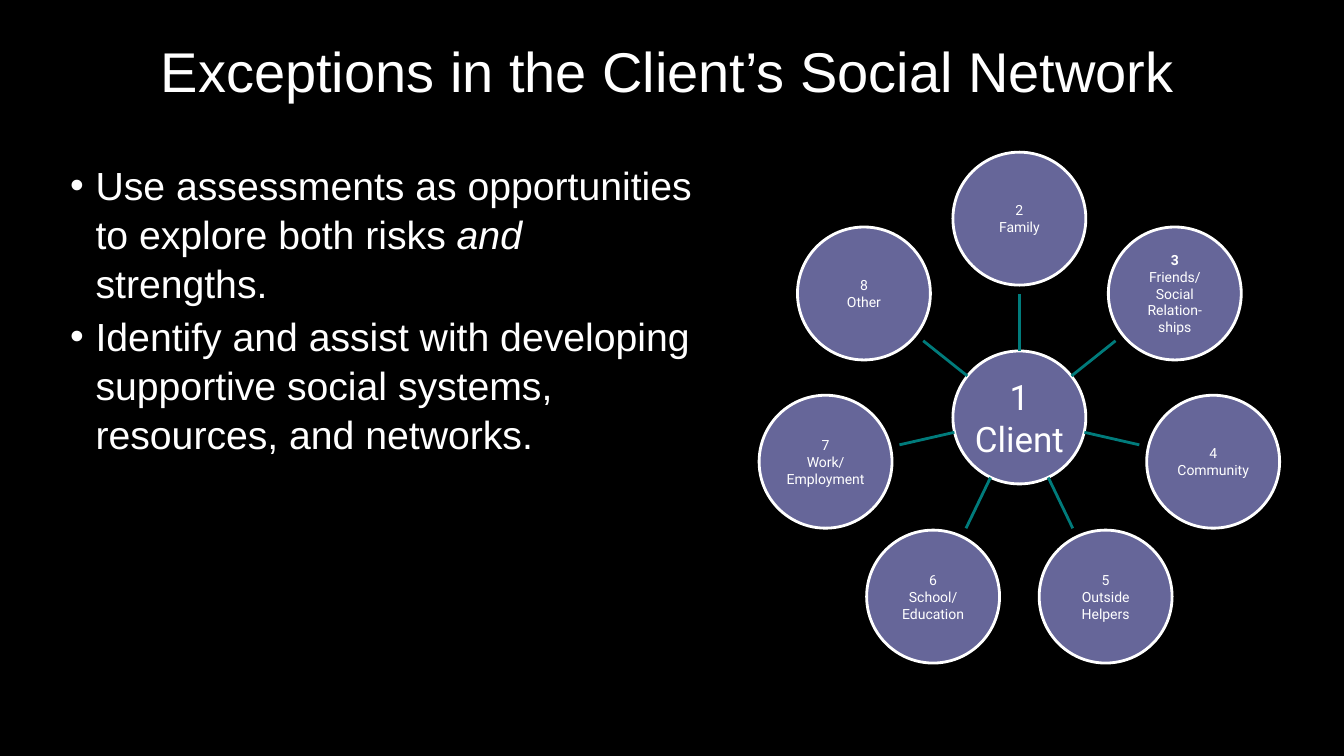
from dataclasses import dataclass
from math import cos, pi, sin

from lxml.etree import SubElement
from pptx import Presentation
from pptx.dml.color import RGBColor
from pptx.enum.shapes import MSO_CONNECTOR, MSO_SHAPE
from pptx.enum.text import MSO_ANCHOR, PP_ALIGN
from pptx.oxml.ns import qn
from pptx.slide import Slide
from pptx.text.text import TextFrame
from pptx.util import Cm, Pt

BLACK, WHITE, PURPLE, TEAL = "000000", "FFFFFF", "666699", "007B7B"
CENTER_X, CENTER_Y = 25.69, 10.52
RING_RADIUS = 5.01
DIAMETER = 3.35
LABEL_SIZE = 2.37
SPOKE_START, SPOKE_END = 1.68, 3.1


@dataclass
class Node:
    number: str
    lines: list[str]
    size: int = 10
    inset: float = 0.03
    bold_number: bool = False


@dataclass
class Run:
    text: str
    italic: bool = False


CLIENT = Node("1", ["Client"], size=25, inset=0.05)
NETWORK = [
    Node("2", ["Family"]),
    Node("3", ["Friends/", "Social Relation-", "ships"], bold_number=True),
    Node("4", ["Community"]),
    Node("5", ["Outside Helpers"]),
    Node("6", ["School/", "Education"]),
    Node("7", ["Work/", "Employment"]),
    Node("8", ["Other"]),
]
BULLETS = [
    [Run("Use assessments as opportunities to explore both risks "),
     Run("and ", italic=True), Run("strengths.")],
    [Run("Identify and assist with developing supportive social systems, "
         "resources, and networks.")],
]


def rgb(color: str) -> RGBColor:
    return RGBColor.from_string(color)


def add_text_frame(s: Slide, x: float, y: float, w: float, h: float,
                   anchor: MSO_ANCHOR) -> TextFrame:
    tf = s.shapes.add_textbox(Cm(x), Cm(y), Cm(w), Cm(h)).text_frame
    tf.word_wrap = True
    tf.vertical_anchor = anchor
    return tf


def add_run(p, text: str, font: str, size: int, bold: bool = False, italic: bool = False) -> None:
    r = p.add_run()
    r.text = text
    r.font.name, r.font.size = font, Pt(size)
    r.font.bold, r.font.italic = bold, italic
    r.font.color.rgb = rgb(WHITE)


def next_paragraph(tf: TextFrame, index: int):
    return tf.paragraphs[0] if index == 0 else tf.add_paragraph()


def add_title(s: Slide, text: str) -> None:
    tf = add_text_frame(s, 2.44, 0.23, 28.75, 3.3, MSO_ANCHOR.MIDDLE)
    p = tf.paragraphs[0]
    p.alignment = PP_ALIGN.CENTER
    p.line_spacing = 0.9
    add_run(p, text, "Arial", 40)


def add_bullets(s: Slide) -> None:
    tf = add_text_frame(s, 1.52, 3.89, 16.25, 13.89, MSO_ANCHOR.TOP)
    for i, runs in enumerate(BULLETS):
        p = next_paragraph(tf, i)
        p.space_before = Pt(3)
        p.line_spacing = 1.04
        pPr = p._p.get_or_add_pPr()
        pPr.set("marL", str(Cm(0.64)))
        pPr.set("indent", str(Cm(-0.64)))
        SubElement(pPr, qn("a:buFont"), typeface="Arial")
        SubElement(pPr, qn("a:buChar"), char="•")
        for run in runs:
            add_run(p, run.text, "Arial", 28, italic=run.italic)


def add_node(s: Slide, node: Node, x: float, y: float) -> None:
    """Draw a circle and its label, both centred on (x, y)."""
    sp = s.shapes.add_shape(MSO_SHAPE.OVAL, Cm(x - DIAMETER / 2), Cm(y - DIAMETER / 2),
                            Cm(DIAMETER), Cm(DIAMETER))
    sp.shadow.inherit = False
    sp.fill.solid()
    sp.fill.fore_color.rgb = rgb(PURPLE)
    sp.line.color.rgb = rgb(WHITE)
    sp.line.width = Pt(2)

    tf = add_text_frame(s, x - LABEL_SIZE / 2, y - LABEL_SIZE / 2,
                        LABEL_SIZE, LABEL_SIZE, MSO_ANCHOR.MIDDLE)
    tf.margin_left = tf.margin_right = tf.margin_top = tf.margin_bottom = Cm(node.inset)
    for i, text in enumerate([node.number, *node.lines]):
        p = next_paragraph(tf, i)
        p.alignment = PP_ALIGN.CENTER
        add_run(p, text, "Roboto", node.size, bold=node.bold_number and i == 0)


def ring_point(angle: float, radius: float) -> tuple[float, float]:
    """Return the point at a clockwise angle from the top of the ring."""
    return CENTER_X + radius * sin(angle), CENTER_Y - radius * cos(angle)


def add_spoke(s: Slide, angle: float) -> None:
    x1, y1 = ring_point(angle, SPOKE_START)
    x2, y2 = ring_point(angle, SPOKE_END)
    line = s.shapes.add_connector(MSO_CONNECTOR.STRAIGHT, Cm(x1), Cm(y1), Cm(x2), Cm(y2))
    line.line.color.rgb = rgb(TEAL)
    line.line.width = Pt(2)
    SubElement(line._element.spPr, qn("a:effectLst"))


def main() -> None:
    prs = Presentation()
    prs.slide_width, prs.slide_height = Cm(33.87), Cm(19.05)
    s = prs.slides.add_slide(prs.slide_layouts[6])
    s.background.fill.solid()
    s.background.fill.fore_color.rgb = rgb(BLACK)

    add_title(s, "Exceptions in the Client’s Social Network")
    add_bullets(s)
    add_node(s, CLIENT, CENTER_X, CENTER_Y)
    for i, node in enumerate(NETWORK):
        angle = 2 * pi * i / len(NETWORK)
        add_spoke(s, angle)
        add_node(s, node, *ring_point(angle, RING_RADIUS))
    prs.save("out.pptx")


if __name__ == "__main__":
    main()
